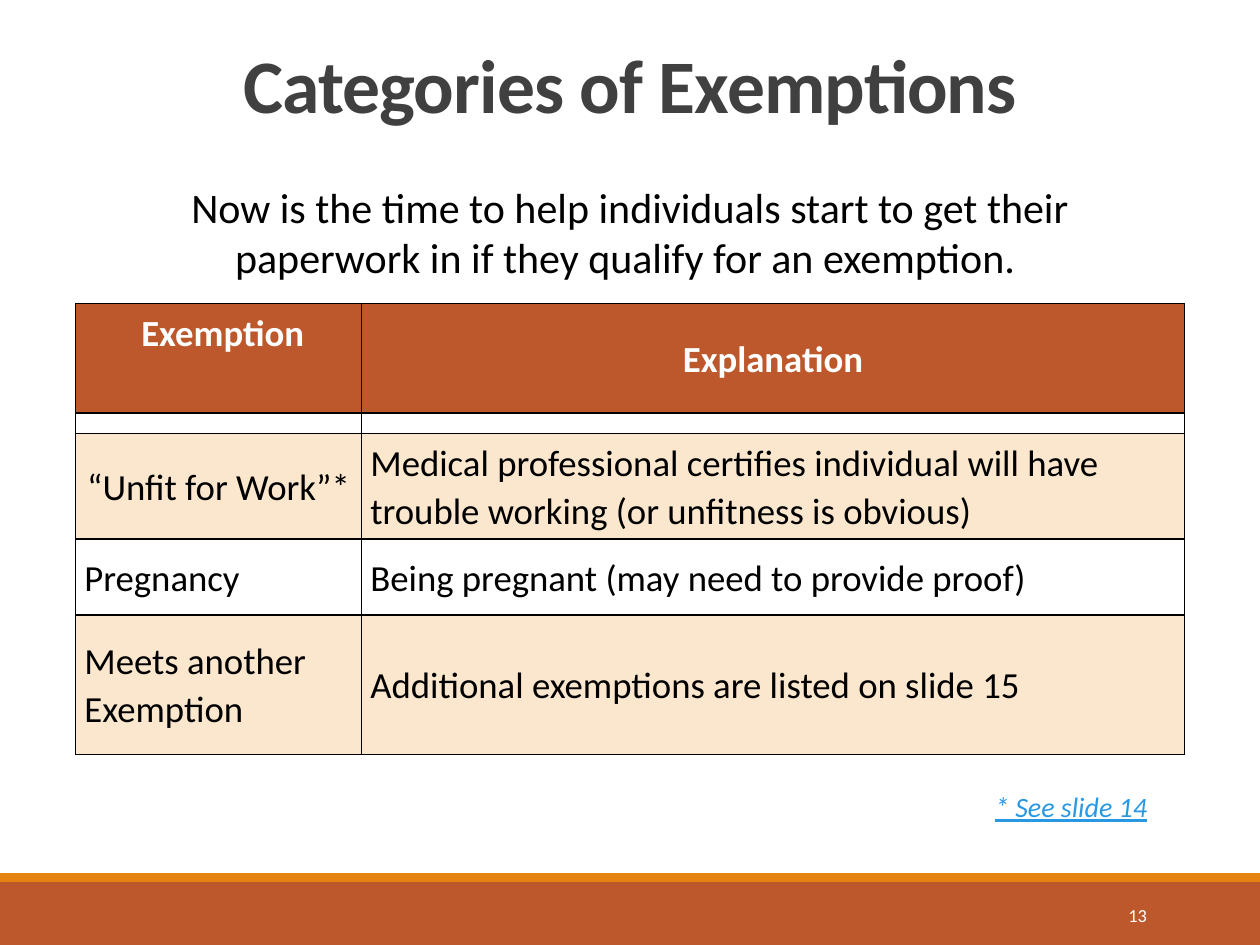
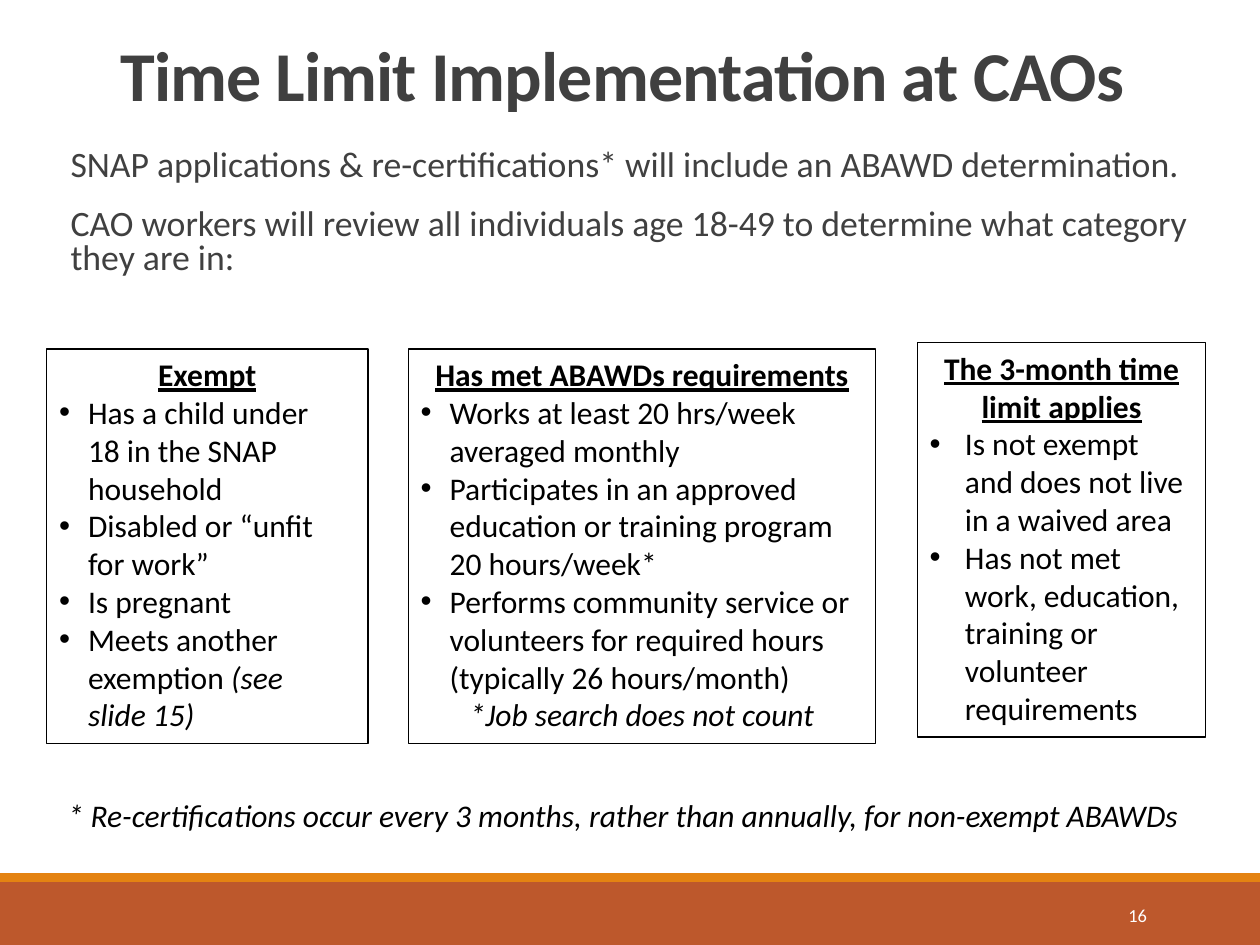
from lxml import etree
from pptx import Presentation
from pptx.dml.color import RGBColor
from pptx.enum.shapes import MSO_SHAPE
from pptx.enum.text import MSO_ANCHOR, MSO_AUTO_SIZE, PP_ALIGN
from pptx.oxml import parse_xml
from pptx.oxml.ns import nsdecls, qn
from pptx.util import Inches, Pt

RECTANGLE = MSO_SHAPE.RECTANGLE
TOP, MIDDLE, BOTTOM = MSO_ANCHOR.TOP, MSO_ANCHOR.MIDDLE, MSO_ANCHOR.BOTTOM
LEFT, CENTER, RIGHT = PP_ALIGN.LEFT, PP_ALIGN.CENTER, PP_ALIGN.RIGHT
NO_AUTOSIZE = MSO_AUTO_SIZE.NONE

RUST = RGBColor(0xBD, 0x58, 0x2C)
ORANGE = RGBColor(0xE4, 0x83, 0x12)
CREAM = RGBColor(0xFB, 0xE6, 0xCE)
GREY = RGBColor(0x40, 0x40, 0x40)
BLUE = RGBColor(0x29, 0x98, 0xE3)
BLACK = RGBColor(0, 0, 0)
WHITE = RGBColor(0xFF, 0xFF, 0xFF)
FONT = "Calibri"


def add_text(paragraph, text, size, color=BLACK, bold=False, italic=False, underline=False):
    """Add a formatted run for each line of the text; return the last run."""
    for number, line in enumerate(text.split("\n")):
        if number:
            paragraph.add_line_break()
        run = paragraph.add_run()
        run.text = line
        font = run.font
        font.name, font.size, font.color.rgb = FONT, Pt(size), color
        font.bold, font.italic, font.underline = bold, italic, underline
    return run


def set_bullet(paragraph, indent=0):
    """Give the paragraph a hanging bullet, or none when there is no indent."""
    properties = paragraph._p.get_or_add_pPr()
    properties.set("marL", str(Inches(indent)))
    properties.set("indent", str(-Inches(indent)))
    if indent:
        font = etree.SubElement(properties, qn("a:buFont"))
        font.set("typeface", "Arial")
        etree.SubElement(properties, qn("a:buChar")).set("char", "•")
    else:
        etree.SubElement(properties, qn("a:buNone"))


prs = Presentation()
prs.slide_width, prs.slide_height = Inches(10), Inches(7.5)

# Shared frame: title, footer bands and slide number
FRAMES = [
    # layout, title, title size, title top, title height, slide number
    (5, "Categories of Exemptions", 43.2, 0.34, 0.73, "13"),
    (1, "Time Limit Implementation at CAOs ", 40, 0.3, 0.67, "16"),
]
for layout, heading, size, top, height, page in FRAMES:
    slide = prs.slides.add_slide(prs.slide_layouts[layout])
    for band_top, band_height, color in ((7, 0.5, RUST), (6.93, 0.07, ORANGE)):
        band = slide.shapes.add_shape(
            RECTANGLE, 0, Inches(band_top), prs.slide_width, Inches(band_height))
        band.shadow.inherit = False
        band.fill.solid()
        band.fill.fore_color.rgb = color
        band.line.fill.background()

    page_number = slide.shapes.add_textbox(
        Inches(8.12), Inches(7.06), Inches(1.08), Inches(0.4)).text_frame
    page_number.word_wrap = True
    page_number.vertical_anchor = MIDDLE
    page_number.paragraphs[0].alignment = RIGHT
    add_text(page_number.paragraphs[0], page, 10.5, WHITE)

    title = slide.shapes.title
    title.left, title.top = Inches(0), Inches(top)
    title.width, title.height = prs.slide_width, Inches(height)
    title.text_frame.auto_size = NO_AUTOSIZE
    title.text_frame.vertical_anchor = BOTTOM
    title_line = title.text_frame.paragraphs[0]
    title_line.alignment, title_line.line_spacing = CENTER, 0.85
    title_run = add_text(title_line, heading, size, GREY, bold=True)
    title_run._r.get_or_add_rPr().set("spc", "-50")

exemptions, time_limit = prs.slides

# Exemptions: introduction
intro = exemptions.shapes.add_textbox(
    Inches(1.21), Inches(1.39), Inches(7.58), Inches(0.91)).text_frame
intro.word_wrap = True
intro.paragraphs[0].alignment = CENTER
add_text(intro.paragraphs[0], "Now is the time to help individuals start to get their "
         "paperwork in if they qualify for an exemption.\u00a0", 24)

# Exemptions: table
ROWS = [
    # height, fill, exemption, explanation
    (0.87, RUST, " Exemption", "Explanation"),
    (0.16, None, "", ""),
    (0.84, CREAM, "“Unfit for Work”*",
     "Medical professional certifies individual will have trouble working "
     "(or unfitness is obvious)"),
    (0.6, None, "Pregnancy", "Being pregnant (may need to provide proof)"),
    (1.11, CREAM, "Meets another Exemption", "Additional exemptions are listed on slide 15"),
]
CENTERED = {(0, 0), (0, 1), (2, 0)}
table = exemptions.shapes.add_table(
    len(ROWS), 2, Inches(0.6), Inches(2.41), Inches(8.8), Inches(3.58)).table
table.first_row = table.horz_banding = False
table.columns[0].width, table.columns[1].width = Inches(2.27), Inches(6.53)
for r, (height, fill, *texts) in enumerate(ROWS):
    table.rows[r].height = Inches(height)
    for c, text in enumerate(texts):
        cell = table.cell(r, c)
        cell.margin_left = cell.margin_right = Inches(0.07)
        cell.margin_top = cell.margin_bottom = Inches(0.04 if text else 0)
        cell.vertical_anchor = TOP if (r, c) == (0, 0) else MIDDLE
        if fill is None:
            cell.fill.background()
        else:
            cell.fill.solid()
            cell.fill.fore_color.rgb = fill
        for position, side in enumerate(("lnL", "lnR", "lnT", "lnB")):
            border = parse_xml(
                f'<a:{side} {nsdecls("a")} w="{Pt(1)}"><a:solidFill>'
                f'<a:srgbClr val="{BLACK}"/></a:solidFill></a:{side}>')
            cell._tc.get_or_add_tcPr().insert(position, border)
        paragraph = cell.text_frame.paragraphs[0]
        if text:
            paragraph.line_spacing = 1.07
            paragraph.alignment = CENTER if (r, c) in CENTERED else LEFT
            add_text(paragraph, text, 21, BLACK if r else WHITE, bold=r == 0)
        else:
            # A small size keeps the spacer row thin
            etree.SubElement(paragraph._p, qn("a:endParaRPr")).set("sz", "400")

# Exemptions: reference
reference = exemptions.shapes.add_textbox(
    Inches(7.8), Inches(6.2), Inches(1.56), Inches(0.39)).text_frame
reference.word_wrap = True
reference.paragraphs[0].line_spacing = 1.07
add_text(reference.paragraphs[0], "* See slide 14", 16, BLUE, italic=True, underline=True)

# Time limit: introduction
review = time_limit.placeholders[1]
review.left, review.top = Inches(0.56), Inches(1.14)
review.width, review.height = Inches(8.88), Inches(1.16)
review_text = review.text_frame
review_text.auto_size = NO_AUTOSIZE
review_text.margin_left = review_text.margin_right = 0
REVIEW = [
    "SNAP applications & re-certifications* will include an ABAWD determination.",
    "CAO workers will review all individuals age 18-49 to determine what category they are in:",
]
for number, sentence in enumerate(REVIEW):
    paragraph = review_text.add_paragraph() if number else review_text.paragraphs[0]
    paragraph.line_spacing = 0.8
    paragraph.space_before, paragraph.space_after = Pt(12), Pt(2)
    set_bullet(paragraph)
    add_text(paragraph, sentence, 20.4, GREY)

# Time limit: the three categories; each point is (plain text, italic text)
CATEGORIES = [
    # left, top, width, bullet indent, heading, points
    (0.37, 2.77, 2.55, 0.23, "Exempt", [
        ("Has a child under\n18 in the SNAP household", ""),
        ("Disabled or “unfit for work”", ""),
        ("Is pregnant", ""),
        ("Meets another exemption ", "(see\nslide 15)")]),
    (3.24, 2.77, 3.71, 0.23, "Has met ABAWDs requirements", [
        ("Works at least 20 hrs/week averaged monthly", ""),
        ("Participates in an approved education or training program 20 hours/week*", ""),
        ("Performs community service or volunteers for required hours "
         "(typically 26 hours/month)", ""),
        ("", "*Job search does not count")]),
    (7.28, 2.72, 2.29, 0.28, "The 3-month time limit applies", [
        ("Is not exempt and does not live in a waived area", ""),
        ("Has not met work, education, training or volunteer requirements", "")]),
]
for left, top, width, indent, heading, points in CATEGORIES:
    category = time_limit.shapes.add_shape(
        RECTANGLE, Inches(left), Inches(top), Inches(width), Inches(3.13))
    category.shadow.inherit = False
    category.fill.background()
    category.line.color.rgb, category.line.width = BLACK, Pt(0.75)
    category_text = category.text_frame
    category_text.word_wrap = True
    category_text.vertical_anchor = TOP
    category_text.paragraphs[0].alignment = CENTER
    add_text(category_text.paragraphs[0], heading, 18, bold=True, underline=True)
    for plain, remark in points:
        paragraph = category_text.add_paragraph()
        paragraph.alignment = LEFT if plain else CENTER
        if plain:
            set_bullet(paragraph, indent)
            add_text(paragraph, plain, 18)
        if remark:
            add_text(paragraph, remark, 18, italic=True)

# Time limit: footnote
footnote = time_limit.shapes.add_textbox(
    Inches(0.44), Inches(6.27), Inches(9.1), Inches(0.4)).text_frame
footnote.word_wrap = True
add_text(footnote.paragraphs[0], "* Re-certifications occur every 3 months, rather than "
         "annually, for non-exempt ABAWDs", 18, italic=True)

prs.save("out.pptx")
